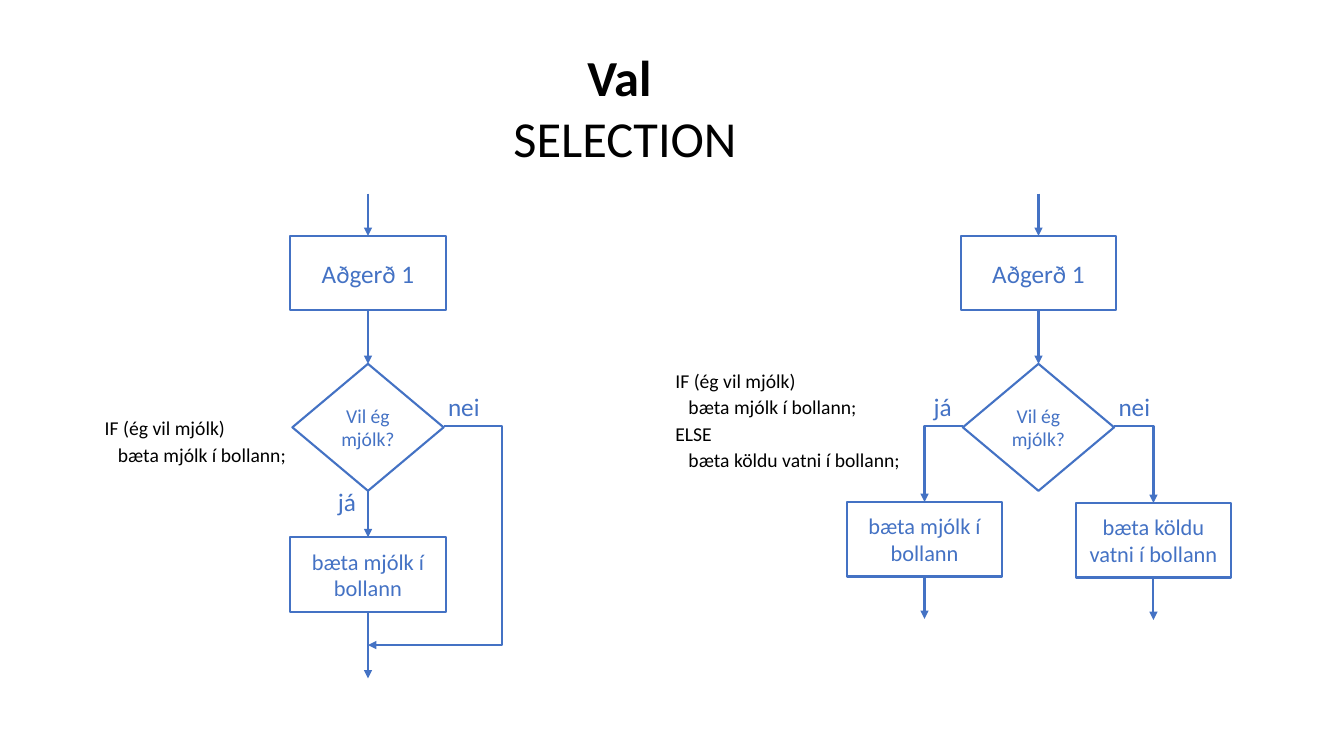
from lxml.etree import SubElement
from pptx import Presentation
from pptx.dml.color import RGBColor
from pptx.enum.shapes import MSO_CONNECTOR as Link, MSO_SHAPE as Shape
from pptx.enum.text import MSO_ANCHOR as Anchor, PP_ALIGN as Align
from pptx.oxml.ns import qn
from pptx.util import Inches, Pt

FONT = "Calibri"
BLUE, BLACK, WHITE = "4472C4", "000000", "FFFFFF"
BOX_W, BOX_H = 1.54, 0.74
DIAMOND_W, DIAMOND_H = 1.5, 1.26
ENTRY_Y, ACTION_Y, QUESTION_Y = 1.92, 2.34, 3.61
BRANCH_Y = QUESTION_Y + DIAMOND_H / 2 - 0.01


def color(hex_value):
    return RGBColor.from_string(hex_value)


def add_run(paragraph, text, size, hex_value, bold=False):
    run = paragraph.add_run()
    run.text = text
    run.font.name = FONT
    run.font.size = Pt(size)
    run.font.bold = bold
    run.font.color.rgb = color(hex_value)


def add_node(slide, kind, text, center, top, width, height, size):
    """Outlined flowchart symbol centred on a vertical axis."""
    node = slide.shapes.add_shape(kind, Inches(center - width / 2), Inches(top),
                                  Inches(width), Inches(height))
    node.shadow.inherit = False
    node.fill.background()
    node.line.color.rgb = color(BLUE)
    node.line.width = Pt(1.5)
    frame = node.text_frame
    frame.word_wrap = True
    frame.vertical_anchor = Anchor.MIDDLE
    frame.paragraphs[0].alignment = Align.CENTER
    add_run(frame.paragraphs[0], text, size, BLUE)


def add_step(slide, text, center, top, size=16):
    add_node(slide, Shape.RECTANGLE, text, center, top, BOX_W, BOX_H, size)


def add_label(slide, text, center, top, width):
    label = slide.shapes.add_textbox(Inches(center - width / 2), Inches(top),
                                     Inches(width), Inches(0.59))
    frame = label.text_frame
    frame.word_wrap = True
    frame.vertical_anchor = Anchor.MIDDLE
    frame.paragraphs[0].alignment = Align.CENTER
    add_run(frame.paragraphs[0], text, 18, BLUE)


def add_arrow(slide, start, end, link=Link.STRAIGHT):
    arrow = slide.shapes.add_connector(link, *map(Inches, start + end))
    arrow.line.color.rgb = color(BLUE)
    arrow.line.width = Pt(1.5)
    SubElement(arrow.line._get_or_add_ln(), qn("a:tailEnd"), type="triangle")
    SubElement(arrow._element.spPr, qn("a:effectLst"))
    return arrow._element.spPr.find(qn("a:prstGeom"))


def add_corner_arrow(slide, start, end):
    """Arrow that runs sideways, then turns down once."""
    geometry = add_arrow(slide, start, end, Link.ELBOW)
    geometry.set("prst", "bentConnector2")


def add_bypass_arrow(slide, start, end, turn_x):
    """Arrow that runs out to turn_x, down, and back."""
    geometry = add_arrow(slide, start, end, Link.ELBOW)
    ratio = (turn_x - start[0]) / (end[0] - start[0])
    guides = geometry.find(qn("a:avLst"))
    if guides is None:
        guides = SubElement(geometry, qn("a:avLst"))
    SubElement(guides, qn("a:gd"), name="adj1", fmla=f"val {round(ratio * 100000)}")


def add_code(slide, lines, left, top, width, height):
    """Pseudocode on white; each line is (text, indented)."""
    code = slide.shapes.add_shape(Shape.RECTANGLE, *map(Inches, (left, top, width, height)))
    code.shadow.inherit = False
    code.fill.solid()
    code.fill.fore_color.rgb = color(WHITE)
    code.line.fill.background()
    frame = code.text_frame
    frame.word_wrap = True
    frame.vertical_anchor = Anchor.TOP
    for index, (text, indented) in enumerate(lines):
        line = frame.add_paragraph() if index else frame.paragraphs[0]
        line.alignment = Align.LEFT
        line.space_before = line.space_after = Pt(1)
        if indented:
            line._p.get_or_add_pPr().set("marL", str(Inches(0.13)))
        add_run(line, text, 14, BLACK)


def add_title(slide):
    title = slide.shapes.add_textbox(Inches(4.82), Inches(0.41), Inches(2.76), Inches(1.31))
    frame = title.text_frame
    frame.word_wrap = True
    for line, text, bold in ((frame.paragraphs[0], "Val ", True),
                             (frame.add_paragraph(), "SELECTION", False)):
        line.alignment = Align.CENTER
        add_run(line, text, 36, BLACK, bold)


def add_decision(slide, axis):
    """Entry, first action and question, shared by both flowcharts."""
    add_arrow(slide, (axis, ENTRY_Y), (axis, ACTION_Y))
    add_step(slide, "Aðgerð 1", axis, ACTION_Y, 18)
    add_arrow(slide, (axis, ACTION_Y + BOX_H), (axis, QUESTION_Y))
    add_node(slide, Shape.DIAMOND, "Vil ég mjólk?", axis, QUESTION_Y,
             DIAMOND_W, DIAMOND_H, 14)
    add_label(slide, "nei", axis + 0.95, 3.74, 0.85)


def main():
    deck = Presentation()
    deck.slide_width, deck.slide_height = Inches(13.33), Inches(7.5)
    slide = deck.slides.add_slide(deck.slide_layouts[6])
    add_title(slide)

    # Pseudocode
    if_part = [("IF (ég vil mjólk)", False), ("bæta mjólk í bollann;", True)]
    else_part = [("ELSE", False), ("bæta köldu vatni í bollann;", True)]
    add_code(slide, if_part, 0.94, 4.08, 2.09, 0.6)
    add_code(slide, if_part + else_part, 6.6, 3.61, 2.55, 1.13)

    # IF: one branch and a bypass
    axis, milk_y = 3.65, 5.33
    add_decision(slide, axis)
    add_label(slide, "já", axis - 0.21, 4.68, 0.68)
    add_arrow(slide, (axis, QUESTION_Y + DIAMOND_H), (axis, milk_y))
    add_step(slide, "bæta mjólk í bollann", axis, milk_y)
    add_arrow(slide, (axis, milk_y + BOX_H), (axis, 6.73))
    add_bypass_arrow(slide, (axis + DIAMOND_W / 2, BRANCH_Y), (axis, 6.4), 4.98)

    # IF ELSE: two branches
    axis = 10.3
    add_decision(slide, axis)
    add_label(slide, "já", axis - 0.95, 3.74, 0.68)
    for side, text, center, top in ((-1, "bæta mjólk í bollann", 9.17, 4.98),
                                    (1, "bæta köldu vatni í bollann", 11.44, 4.99)):
        add_corner_arrow(slide, (axis + side * DIAMOND_W / 2, BRANCH_Y), (center, top))
        add_step(slide, text, center, top)
        add_arrow(slide, (center, top + BOX_H), (center, top + BOX_H + 0.42))

    deck.save("out.pptx")


if __name__ == "__main__":
    main()
